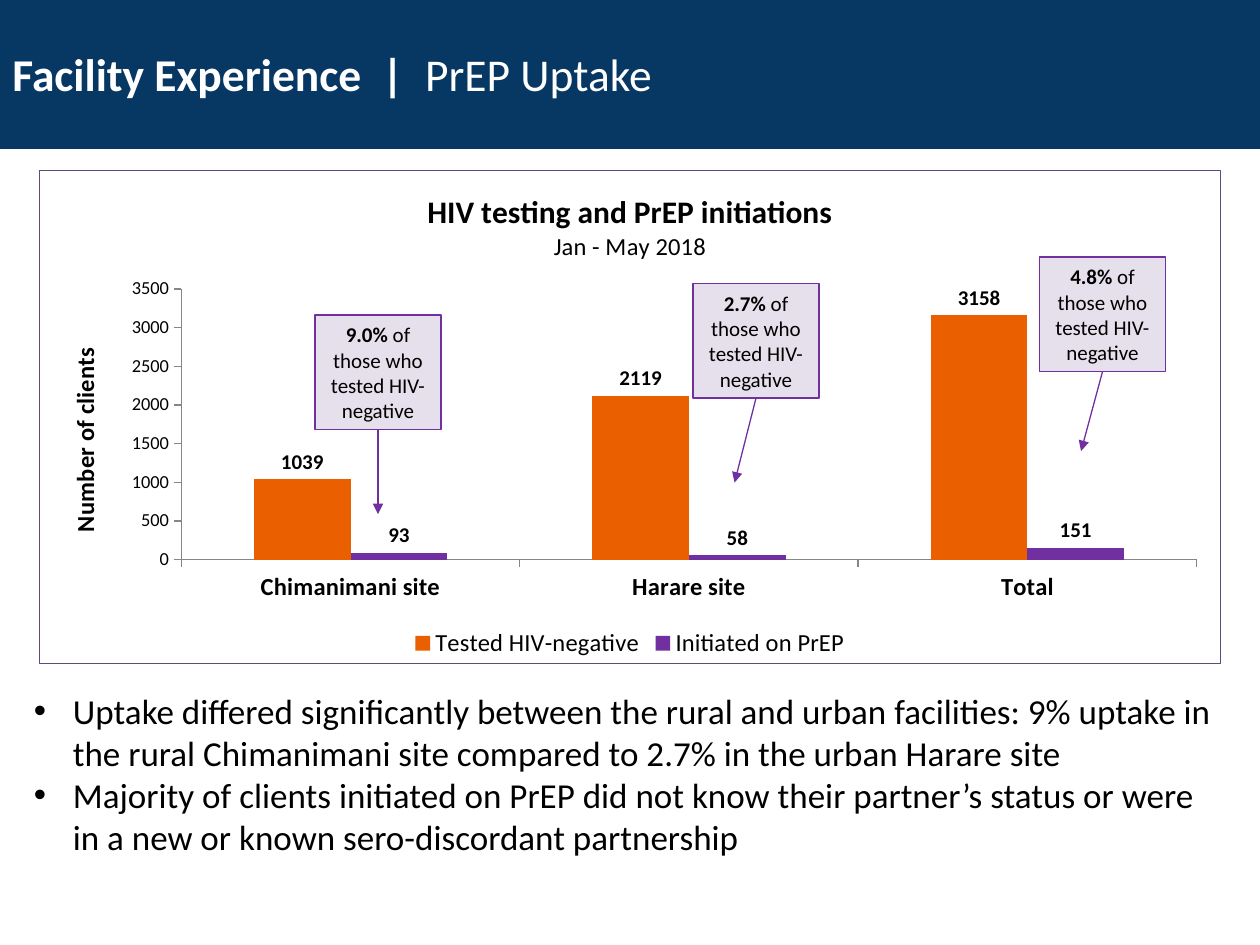
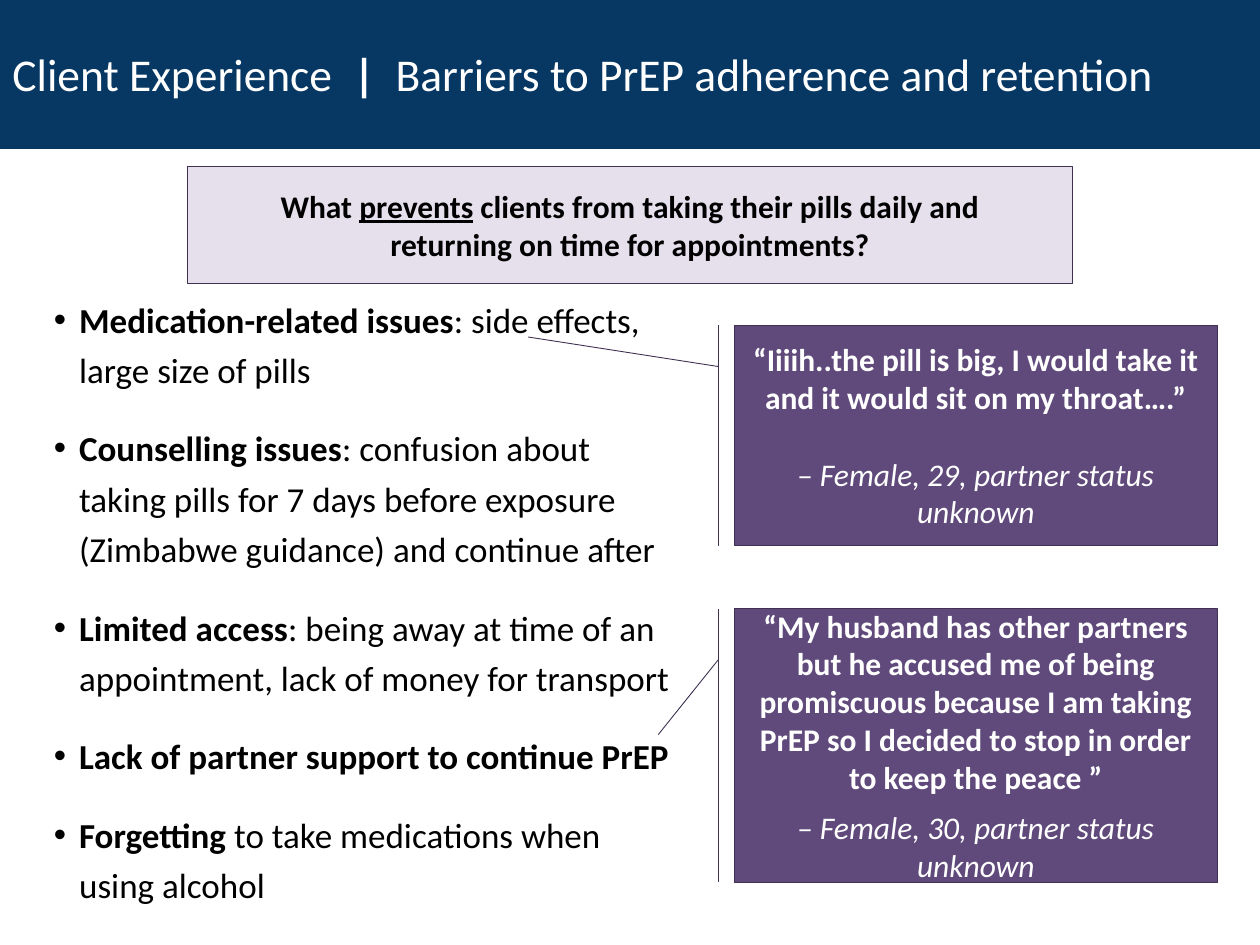
"""Build two slides on PrEP uptake and on barriers to adherence."""
from dataclasses import dataclass

from lxml import etree
from pptx import Presentation
from pptx.chart.data import CategoryChartData
from pptx.dml.color import RGBColor
from pptx.enum.chart import XL_CHART_TYPE, XL_LABEL_POSITION, XL_LEGEND_POSITION, XL_TICK_MARK
from pptx.enum.shapes import MSO_CONNECTOR, MSO_SHAPE
from pptx.enum.text import MSO_ANCHOR, PP_ALIGN
from pptx.oxml import parse_xml
from pptx.oxml.ns import nsdecls, qn
from pptx.util import Inches, Pt


@dataclass(frozen=True)
class Theme:
    font: str = "Calibri"
    navy: str = "073763"
    white: str = "FFFFFF"
    black: str = "000000"
    grey: str = "868686"
    lilac: str = "E6E0EC"
    plum: str = "604A7B"
    dark_plum: str = "403152"
    purple: str = "7030A0"
    orange: str = "EA5F00"
    title: float = 26
    body: float = 20
    quote: float = 18
    axis: float = 14
    note: float = 12
    tick: float = 10.5


T = Theme()
BULLETS = [
    [("Uptake differed significantly between the rural and urban facilities: 9% uptake in "
      "the rural Chimanimani site compared to 2.7% in the urban Harare site", "")],
    [("Majority of clients initiated on PrEP did not know their partner’s status or were "
      "in a new or known sero-discordant partnership", "")],
]
RATES = [
    ("9.0% ", 2.5, 2.5, (3, 4.08)),
    ("2.7% ", 5.5, 2.25, (5.83, 3.83)),
    ("4.8% ", 8.25, 2.04, (8.58, 3.58)),
]
BARRIERS = [
    [("Medication-related issues", "b"), (": side effects, large size of pills", "")],
    [("Counselling issues", "b"), (": confusion about taking pills for 7 days before exposure "
                                   "(Zimbabwe guidance) and continue after", "")],
    [("Limited access", "b"), (": being away at time of an appointment, "
                               "lack of money for transport", "")],
    [("Lack of partner support to continue PrEP", "b")],
    [("Forgetting", "b"), (" to take medications when using alcohol", "")],
]
QUESTION = [("What ", "b"), ("prevents", "bu"),
            (" clients from taking their pills daily and returning on time for appointments?", "b")]
QUOTES = [
    ("“Iiiih..the pill is big, I would take it and it would sit on my throat….”",
     "– Female, 29, partner status unknown", 2.58, 1.75, (0.054, -0.428), 22),
    ("“My husband has other partners but he accused me of being promiscuous because "
     "I am taking PrEP so I decided to stop in order to keep the peace ”",
     "– Female, 30, partner status unknown", 4.83, 2.17, (0.461, -0.158), 7.3),
]


def rgb(color):
    """Return a colour object for a hex string."""
    return RGBColor.from_string(color)


def set_font(font, size, color=T.black, style=""):
    """Format a font; style holds any of the letters b, i and u."""
    font.name, font.size = T.font, Pt(size)
    font.color.rgb = rgb(color)
    font.bold, font.italic = "b" in style, "i" in style
    if "u" in style:
        font.underline = True


def write(tf, paragraphs, size, color=T.black, align=PP_ALIGN.LEFT):
    """Fill a text frame with paragraphs of (text, style) runs."""
    tf.word_wrap = True
    for i, runs in enumerate(paragraphs):
        p = tf.paragraphs[0] if i == 0 else tf.add_paragraph()
        p.alignment = align
        for text, style in runs:
            r = p.add_run()
            r.text = text
            set_font(r.font, size, color, style)


def add_box(slide, at, fill, line, width, shape=MSO_SHAPE.RECTANGLE):
    """Add a filled and outlined shape without a shadow."""
    sp = slide.shapes.add_shape(shape, *map(Inches, at))
    sp.shadow.inherit = False
    sp.fill.solid()
    sp.fill.fore_color.rgb = rgb(fill)
    sp.line.color.rgb = rgb(line)
    sp.line.width = Pt(width)
    return sp


def add_title(slide, runs):
    """Add the title band."""
    sp = add_box(slide, (0, 0, 10, 1.17), T.navy, T.navy, 2)
    write(sp.text_frame, [runs], T.title, T.white)


def add_bullets(slide, at, items, indent, line_spacing=1.0, space_before=0):
    """Add a bulleted text box."""
    tf = slide.shapes.add_textbox(*map(Inches, at)).text_frame
    write(tf, items, T.body)
    for p in tf.paragraphs:
        p.line_spacing, p.space_before = line_spacing, Pt(space_before)
        pPr = p._p.get_or_add_pPr()
        pPr.set("marL", str(Inches(indent)))
        pPr.set("indent", str(-Inches(indent)))
        etree.SubElement(pPr, qn("a:buFont"), typeface="Arial")
        etree.SubElement(pPr, qn("a:buChar"), char="•")


def add_rate(slide, rate, left, top, tip):
    """Add a rate note with an arrow from its lower side to the tip."""
    sp = add_box(slide, (left, top, 1, 0.91), T.lilac, T.purple, 0.75)
    write(sp.text_frame, [[(rate, "b"), ("of those who tested HIV-negative", "")]],
          T.note, align=PP_ALIGN.CENTER)
    start = (left + 0.5, top + 0.91)
    arrow = slide.shapes.add_connector(MSO_CONNECTOR.STRAIGHT, *map(Inches, start + tip))
    arrow.begin_connect(sp, 2)
    arrow.line.color.rgb = rgb(T.purple)
    arrow.line.width = Pt(0.75)
    etree.SubElement(arrow.line._get_or_add_ln(), qn("a:tailEnd"), type="triangle")
    etree.SubElement(arrow._element.spPr, qn("a:effectLst"))


def add_quote(slide, quote, speaker, top, height, tip, gap):
    """Add a client quote in a callout with an accent bar."""
    sp = add_box(slide, (5.83, top, 3.83, height), T.plum, T.dark_plum, 0.5,
                 MSO_SHAPE.LINE_CALLOUT_1_BORDER_AND_ACCENT_BAR)
    for i, value in enumerate((0.188, -0.034) + tip):
        sp.adjustments[i] = value
    tf = sp.text_frame
    tf.vertical_anchor = MSO_ANCHOR.MIDDLE
    write(tf, [[(quote, "b")], [(speaker, "i")]], T.quote, T.white, PP_ALIGN.CENTER)
    tf.paragraphs[1].space_before = Pt(gap)


def style_axis(axis, size, style=""):
    """Format the line, ticks and labels of an axis."""
    axis.has_major_gridlines = False
    axis.major_tick_mark = XL_TICK_MARK.OUTSIDE
    axis.minor_tick_mark = XL_TICK_MARK.NONE
    axis.format.line.color.rgb = rgb(T.grey)
    set_font(axis.tick_labels.font, size, style=style)


def frame_chart(chart, x, y, w, h):
    """Place the plot as fractions of the chart and outline the chart."""
    plot_area = chart._chartSpace.chart.plotArea
    for old in plot_area.findall(qn("c:layout")):
        plot_area.remove(old)
    layout = etree.Element(qn("c:layout"))
    manual = etree.SubElement(layout, qn("c:manualLayout"))
    settings = {"layoutTarget": "inner", "xMode": "edge", "yMode": "edge",
                "x": x, "y": y, "w": w, "h": h}
    for tag, value in settings.items():
        etree.SubElement(manual, qn(f"c:{tag}"), val=str(value))
    plot_area.insert(0, layout)
    chart._chartSpace.chart.addnext(parse_xml(
        f'<c:spPr {nsdecls("c", "a")}><a:noFill/><a:ln w="{Pt(0.75)}"><a:solidFill>'
        f'<a:srgbClr val="{T.plum}"/></a:solidFill></a:ln></c:spPr>'))


def add_uptake_chart(slide):
    """Add the column chart of tests and initiations."""
    data = CategoryChartData()
    data.categories = ["Chimanimani site", "Harare site", "Total"]
    data.add_series("Tested HIV-negative", (1039, 2119, 3158))
    data.add_series("Initiated on PrEP", (93, 58, 151))
    at = map(Inches, (0.31, 1.35, 9.38, 3.92))
    chart = slide.shapes.add_chart(XL_CHART_TYPE.COLUMN_CLUSTERED, *at, data).chart
    set_font(chart.font, 10)
    write(chart.chart_title.text_frame, [[("HIV testing and PrEP initiations", "b")]], T.quote)
    subtitle = chart.chart_title.text_frame.add_paragraph()
    subtitle.text = "Jan - May 2018"
    set_font(subtitle.runs[0].font, T.axis)
    for p in chart.chart_title.text_frame.paragraphs:
        p.alignment = PP_ALIGN.CENTER
    style_axis(chart.category_axis, T.axis, "b")
    style_axis(chart.value_axis, T.tick)
    chart.value_axis.minimum_scale, chart.value_axis.maximum_scale = 0, 3500
    chart.value_axis.major_unit = 500
    axis_title = chart.value_axis.axis_title.text_frame
    axis_title.text = "Number of clients"
    set_font(axis_title.paragraphs[0].runs[0].font, T.axis, style="b")
    chart.has_legend = True
    chart.legend.position = XL_LEGEND_POSITION.BOTTOM
    chart.legend.include_in_layout = False
    set_font(chart.legend.font, T.axis)
    plot = chart.plots[0]
    plot.gap_width, plot.overlap, plot.vary_by_categories = 150, 0, False
    for series, color in zip(plot.series, (T.orange, T.purple)):
        series.format.fill.solid()
        series.format.fill.fore_color.rgb = rgb(color)
        labels = series.data_labels
        labels.show_value = True
        labels.position = XL_LABEL_POSITION.OUTSIDE_END
        set_font(labels.font, T.note, style="b")
    frame_chart(chart, 0.12, 0.24, 0.86, 0.55)


def build_uptake(slide):
    """Fill the slide on uptake by facility."""
    add_title(slide, [("Facility Experience  |  ", "b"), ("PrEP Uptake", "")])
    add_bullets(slide, (0.17, 5.42, 9.58, 1.45), BULLETS, 0.31)
    add_uptake_chart(slide)
    for rate in RATES:
        add_rate(slide, *rate)


def build_barriers(slide):
    """Fill the slide on barriers to adherence."""
    add_title(slide, [("Client Experience  ", ""), ("|  ", "b"),
                      ("Barriers to PrEP adherence and retention", "")])
    add_bullets(slide, (0.33, 2.25, 5.17, 5), BARRIERS, 0.2, 1.2, 16)
    question = add_box(slide, (1.49, 1.32, 7.02, 0.93), T.lilac, T.dark_plum, 0.75)
    tf = question.text_frame
    tf.margin_left = tf.margin_right = Inches(0.6)
    write(tf, [QUESTION], T.quote, align=PP_ALIGN.CENTER)
    for quote in QUOTES:
        add_quote(slide, *quote)


def main():
    """Build and save the slides."""
    prs = Presentation()
    prs.slide_width, prs.slide_height = Inches(10), Inches(7.5)
    for build in (build_uptake, build_barriers):
        build(prs.slides.add_slide(prs.slide_layouts[6]))
    prs.save("out.pptx")


if __name__ == "__main__":
    main()
